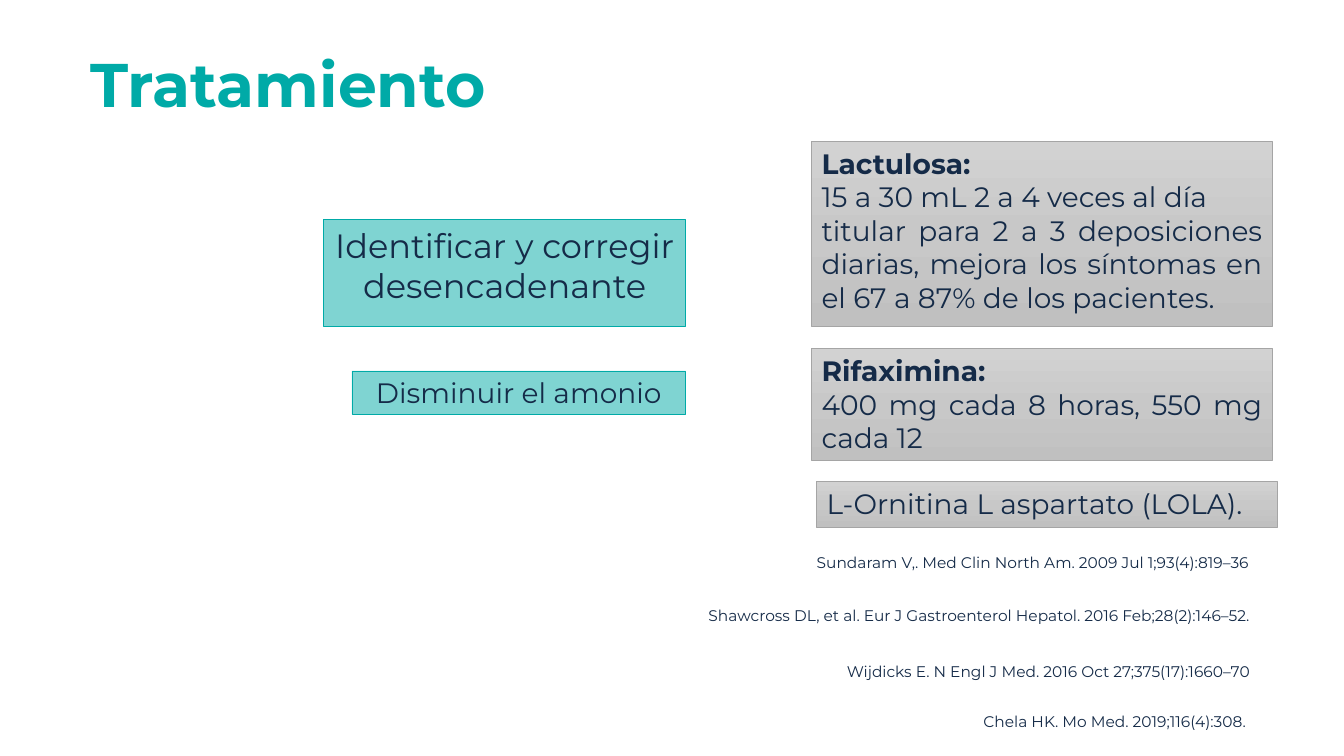
from copy import deepcopy
from dataclasses import dataclass

from lxml.etree import SubElement
from pptx import Presentation
from pptx.dml.color import RGBColor
from pptx.enum.shapes import MSO_SHAPE as Kind
from pptx.enum.text import MSO_ANCHOR as Anchor, MSO_AUTO_SIZE as Auto, PP_ALIGN as Align
from pptx.oxml.ns import qn
from pptx.util import Inches, Pt

TEAL = RGBColor(0x00, 0xAA, 0xA7)
NAVY = RGBColor(0x15, 0x2B, 0x48)
EDGE = RGBColor(0xA5, 0xA5, 0xA5)
SHADES = (
    RGBColor(0xD2, 0xD2, 0xD2),
    RGBColor(0xC8, 0xC8, 0xC8),
    RGBColor(0xC0, 0xC0, 0xC0),
)
FONT = "Montserrat"


@dataclass
class Area:
    left: float
    top: float
    width: float
    height: float

    def emu(self) -> list:
        return [Inches(v) for v in (self.left, self.top, self.width, self.height)]


@dataclass
class Goal:
    area: Area
    text: str
    size: int


@dataclass
class Drug:
    area: Area
    head: str
    lines: tuple = ()
    bold: bool = True
    grow: bool = True


@dataclass
class Cite:
    area: Area
    text: str


GOALS = (
    Goal(Area(3.21, 2.18, 3.59, 1.06), "Identificar y corregir desencadenante", 24),
    Goal(Area(3.49, 3.68, 3.31, 0.43), "Disminuir el amonio", 20),
)
DRUGS = (
    Drug(
        Area(8.05, 1.4, 4.57, 1.84),
        "Lactulosa:",
        (
            "15 a 30 mL 2 a 4 veces al día",
            "titular para 2 a 3 deposiciones diarias, mejora los síntomas en el 67 a 87% de los pacientes.",
        ),
        grow=False,
    ),
    Drug(Area(8.05, 3.46, 4.57, 1.11), "Rifaximina:", ("400 mg cada 8 horas, 550 mg cada 12",)),
    Drug(Area(8.1, 4.78, 4.57, 0.45), "L-Ornitina L aspartato (LOLA).", bold=False),
)
CITES = (
    Cite(Area(5.81, 5.44, 6.68, 0.29), "Sundaram V,. Med Clin North Am. 2009 Jul 1;93(4):819–36"),
    Cite(
        Area(5.91, 5.96, 6.59, 0.29),
        "Shawcross DL, et al. Eur J Gastroenterol Hepatol. 2016 Feb;28(2):146–52.",
    ),
    Cite(Area(6.68, 6.52, 5.82, 0.29), "Wijdicks E. N Engl J Med. 2016 Oct 27;375(17):1660–70"),
    Cite(Area(7.66, 7.02, 4.84, 0.29), "Chela HK. Mo Med. 2019;116(4):308. "),
)


def write(shape, *lines: str, size: int, align=Align.LEFT, color=NAVY,
          bold: bool = False, wrap: bool = True, grow: bool = True) -> None:
    frame = shape.text_frame
    frame.word_wrap = wrap
    frame.auto_size = Auto.SHAPE_TO_FIT_TEXT if grow else Auto.NONE
    frame.vertical_anchor = Anchor.TOP
    for i, line in enumerate(lines):
        para = frame.paragraphs[0] if i == 0 else frame.add_paragraph()
        para.alignment = align
        run = para.add_run()
        run.text = line
        run.font.name = FONT
        run.font.size = Pt(size)
        run.font.bold = bold and i == 0
        run.font.color.rgb = color


def add_box(slide, area: Area, edge: RGBColor):
    box = slide.shapes.add_shape(Kind.RECTANGLE, *area.emu())
    box.shadow.inherit = False
    box.line.color.rgb = edge
    box.line.width = Pt(0.5)
    return box


def add_goal(slide, goal: Goal) -> None:
    box = add_box(slide, goal.area, TEAL)
    box.fill.solid()
    box.fill.fore_color.rgb = TEAL
    tint = box.fill._xPr.find(qn("a:solidFill"))[0]
    SubElement(tint, qn("a:alpha")).set("val", "50000")
    write(box, goal.text, size=goal.size, align=Align.CENTER, grow=False)


def add_drug(slide, drug: Drug) -> None:
    box = add_box(slide, drug.area, EDGE)
    box.fill.gradient()
    box.fill.gradient_angle = 270
    first = box.fill._xPr.find(".//" + qn("a:gs"))
    first.addnext(deepcopy(first))
    for i, (stop, shade) in enumerate(zip(box.fill.gradient_stops, SHADES)):
        stop.position = i / 2
        stop.color.rgb = shade
    write(box, drug.head, *drug.lines, size=20, align=Align.JUSTIFY,
          bold=drug.bold, grow=drug.grow)


def add_cite(slide, cite: Cite) -> None:
    box = slide.shapes.add_textbox(*cite.area.emu())
    write(box, cite.text, size=11, align=Align.RIGHT)


def main() -> None:
    deck = Presentation()
    deck.slide_width = Inches(13.33)
    deck.slide_height = Inches(7.5)
    slide = deck.slides.add_slide(deck.slide_layouts[6])
    title = slide.shapes.add_textbox(*Area(0.8, 0.41, 4.2, 0.84).emu())
    write(title, "Tratamiento", size=44, color=TEAL, bold=True, wrap=False)
    for goal in GOALS:
        add_goal(slide, goal)
    for drug in DRUGS:
        add_drug(slide, drug)
    for cite in CITES:
        add_cite(slide, cite)
    deck.save("out.pptx")


if __name__ == "__main__":
    main()
